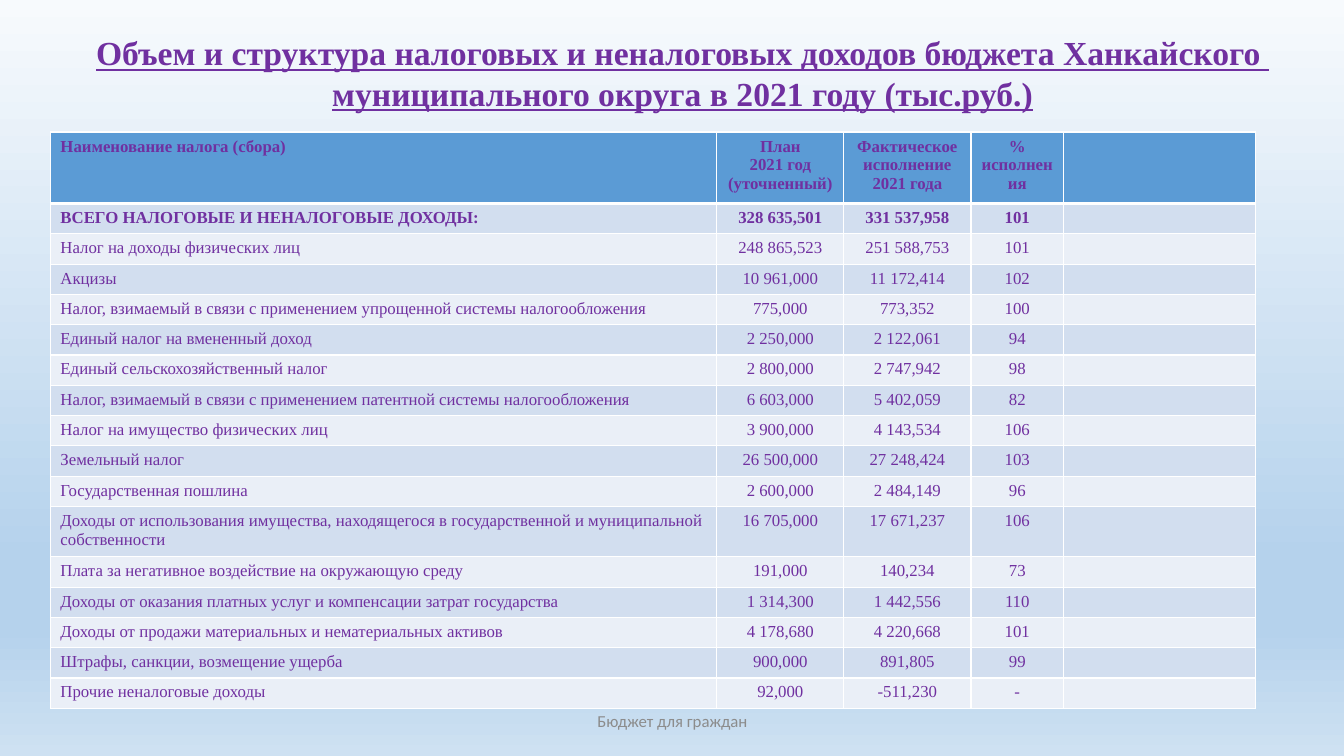
from lxml.etree import SubElement
from pptx import Presentation
from pptx.dml.color import RGBColor
from pptx.enum.text import MSO_ANCHOR, MSO_AUTO_SIZE, PP_ALIGN
from pptx.oxml import parse_xml
from pptx.oxml.ns import nsdecls, qn
from pptx.util import Inches, Pt

COLORS = {
    "text": "7030A0",
    "footer": "8C8C8C",
    "header": "5B9BD5",
    "odd": "D2DEEF",
    "even": "EAEFF7",
    "border": "FFFFFF",
}
BACKGROUND_STOPS = [(0, "F7FAFD"), (74, "B5D2EC"), (83, "B5D2EC"), (100, "CEE1F2")]
COLUMN_WIDTHS = [6.61, 1.26, 1.26, 0.92, 1.9]
INCOME_ROWS = [
    ("Наименование налога (сбора)", "План\n2021 год (уточненный)",
     "Фактическое исполнение 2021 года", "% исполнения", ""),
    ("ВСЕГО НАЛОГОВЫЕ И НЕНАЛОГОВЫЕ ДОХОДЫ:", "328 635,501", "331 537,958", "101", ""),
    ("Налог на доходы физических лиц", "248 865,523", "251 588,753", "101", ""),
    ("Акцизы", "10 961,000", "11 172,414", "102", ""),
    ("Налог, взимаемый в связи с применением упрощенной системы налогообложения",
     "775,000", "773,352", "100", ""),
    ("Единый налог на вмененный доход", "2 250,000", "2 122,061", "94", ""),
    ("Единый сельскохозяйственный налог", "2 800,000", "2 747,942", "98", ""),
    ("Налог, взимаемый в связи с применением патентной системы налогообложения",
     "6 603,000", "5 402,059", "82", ""),
    ("Налог на имущество физических лиц", "3 900,000", "4 143,534", "106", ""),
    ("Земельный налог", "26 500,000", "27 248,424", "103", ""),
    ("Государственная пошлина", "2 600,000", "2 484,149", "96", ""),
    ("Доходы от использования имущества, находящегося в государственной и муниципальной собственности",
     "16 705,000", "17 671,237", "106", ""),
    ("Плата за негативное воздействие на окружающую среду", "191,000", "140,234", "73", ""),
    ("Доходы от оказания платных услуг и компенсации затрат государства",
     "1 314,300", "1 442,556", "110", ""),
    ("Доходы от продажи материальных и нематериальных активов",
     "4 178,680", "4 220,668", "101", ""),
    ("Штрафы, санкции, возмещение ущерба", "900,000", "891,805", "99", ""),
    ("Прочие неналоговые доходы", "92,000", "-511,230", "-", ""),
]
ROW_HEIGHT = 0.3
SPECIAL_HEIGHTS = {0: 0.71, 11: 0.5}


def write(frame, text, size=12, font="Times New Roman", color="text",
          bold=False, underline=False, align=PP_ALIGN.CENTER):
    frame.text = text
    for paragraph in frame.paragraphs:
        paragraph.alignment = align
        for run in paragraph.runs:
            run.font.size = Pt(size)
            run.font.name = font
            run.font.bold = bold
            run.font.underline = underline
            run.font.color.rgb = RGBColor.from_string(COLORS[color])
        if not paragraph.runs:
            SubElement(paragraph._p, qn("a:endParaRPr"), sz=str(size * 100))


presentation = Presentation()
presentation.slide_width = Inches(13.33)
presentation.slide_height = Inches(7.5)
slide = presentation.slides.add_slide(presentation.slide_layouts[5])

backdrop = slide.background.fill
backdrop.gradient()
backdrop.gradient_angle = 270
stops = slide._element.find(".//" + qn("a:gsLst"))
for stop in list(stops):
    stops.remove(stop)
for position, color in BACKGROUND_STOPS:
    stop = SubElement(stops, qn("a:gs"), pos=str(position * 1000))
    SubElement(stop, qn("a:srgbClr"), val=color)

title = slide.shapes.title
title.left, title.top = Inches(0.79), Inches(0.27)
title.width, title.height = Inches(11.96), Inches(0.91)
write(title.text_frame,
      "Объем и структура налоговых и неналоговых доходов бюджета Ханкайского \n"
      "муниципального округа в 2021 году (тыс.руб.)",
      size=24, bold=True, underline=True)
title.text_frame.word_wrap = False
title.text_frame.auto_size = MSO_AUTO_SIZE.SHAPE_TO_FIT_TEXT
title.text_frame.vertical_anchor = MSO_ANCHOR.TOP

incomes = slide.shapes.add_table(
    len(INCOME_ROWS), len(COLUMN_WIDTHS),
    Inches(0.5), Inches(1.31), Inches(11.95), Inches(5.71)).table
for column, width in zip(incomes.columns, COLUMN_WIDTHS):
    column.width = Inches(width)

for row_index, values in enumerate(INCOME_ROWS):
    incomes.rows[row_index].height = Inches(SPECIAL_HEIGHTS.get(row_index, ROW_HEIGHT))
    band = "header" if row_index == 0 else "odd" if row_index % 2 else "even"
    for column_index, value in enumerate(values):
        cell = incomes.cell(row_index, column_index)
        write(cell.text_frame, value, bold=row_index < 2,
              align=PP_ALIGN.CENTER if column_index else PP_ALIGN.LEFT)
        cell.fill.solid()
        cell.fill.fore_color.rgb = RGBColor.from_string(COLORS[band])
        widths = {"L": 1, "R": 1, "T": 3 if row_index == 1 else 1, "B": 3 if row_index == 0 else 1}
        for order, (side, width) in enumerate(widths.items()):
            cell._tc.tcPr.insert(order, parse_xml(
                f'<a:ln{side} {nsdecls("a")} w="{Pt(width)}"><a:solidFill>'
                f'<a:srgbClr val="{COLORS["border"]}"/></a:solidFill></a:ln{side}>'))

footer = slide.shapes.add_textbox(Inches(4.42), Inches(6.95), Inches(4.5), Inches(0.4))
footer.text_frame.word_wrap = True
footer.text_frame.vertical_anchor = MSO_ANCHOR.MIDDLE
write(footer.text_frame, "Бюджет для граждан", font="Calibri", color="footer")

presentation.save("out.pptx")
